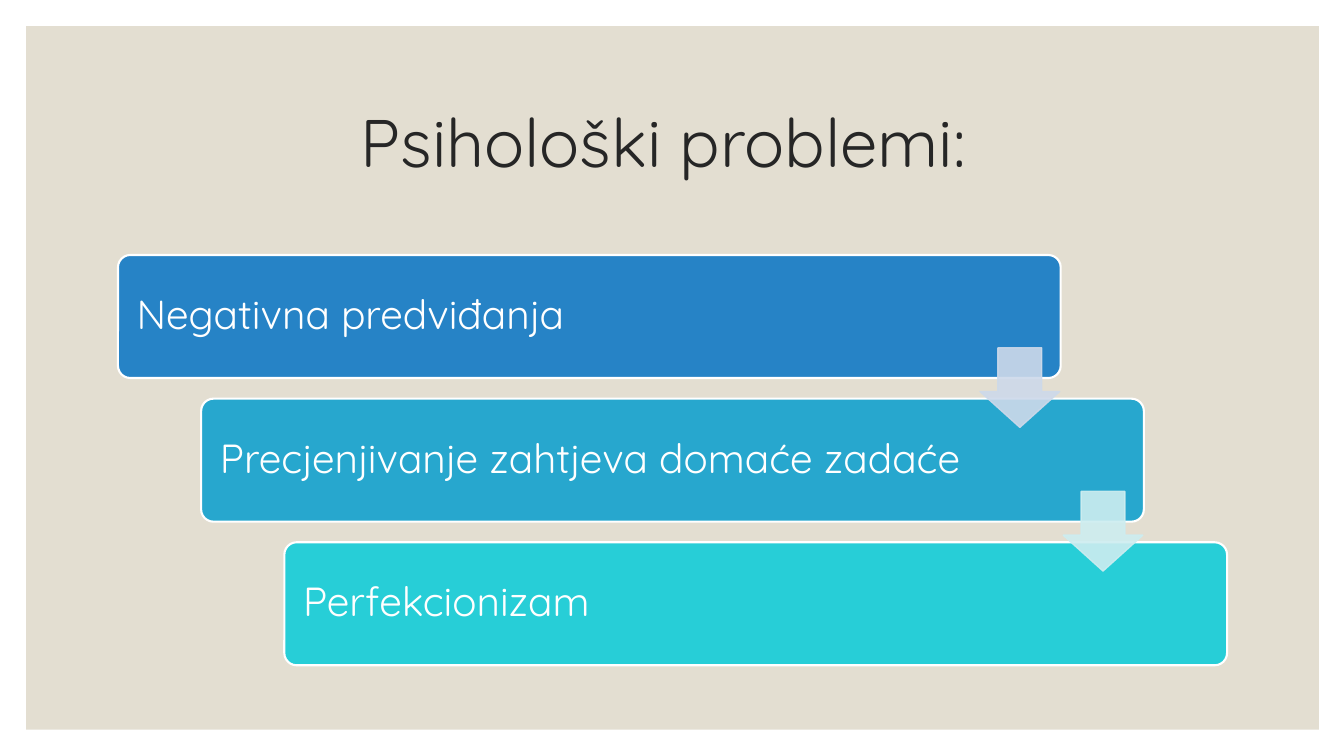
from lxml.etree import SubElement
from pptx import Presentation
from pptx.dml.color import RGBColor
from pptx.enum.shapes import MSO_SHAPE
from pptx.enum.text import MSO_ANCHOR, PP_ALIGN
from pptx.oxml.ns import qn
from pptx.util import Inches, Pt

WHITE = RGBColor(0xFF, 0xFF, 0xFF)
SAND = RGBColor(0xE3, 0xDE, 0xD1)
DARK = RGBColor(0x26, 0x26, 0x26)
BLUE = RGBColor(0x26, 0x83, 0xC6)
AZURE = RGBColor(0x27, 0xA7, 0xCE)
CYAN = RGBColor(0x27, 0xCE, 0xD7)
PALE = RGBColor(0xCD, 0xD9, 0xEA)
MINT = RGBColor(0xCD, 0xED, 0xF0)


def add_form(kind, left, top, width, height, fill):
    form = slide.shapes.add_shape(
        kind, Inches(left), Inches(top), Inches(width), Inches(height))
    form.shadow.inherit = False
    form.fill.solid()
    form.fill.fore_color.rgb = fill
    return form


def set_text(frame, text, size, color, align):
    frame.word_wrap = True
    frame.vertical_anchor = MSO_ANCHOR.MIDDLE
    para = frame.paragraphs[0]
    para.text = text
    para.alignment = align
    para.line_spacing = 0.9
    font = para.runs[0].font
    font.name = "Quicksand"
    font.size = Pt(size)
    font.color.rgb = color


prs = Presentation()
prs.slide_width = Inches(13.33)
prs.slide_height = Inches(7.5)
slide = prs.slides.add_slide(prs.slide_layouts[6])

# Background panel
panel = add_form(MSO_SHAPE.RECTANGLE, 0.26, 0.26, 12.82, 6.98, SAND)
panel.line.fill.background()

# Title
title = slide.shapes.add_textbox(Inches(1.17), Inches(0.7), Inches(11), Inches(1.5))
set_text(title.text_frame, "Psihološki problemi: ", 48, DARK, PP_ALIGN.CENTER)
title.text_frame.paragraphs[0].space_after = Pt(6)

# Staircase of steps
LEFT, TOP = 1.17, 2.53
DX, DY = 0.825, 1.425
steps = [
    ("Negativna predviđanja", BLUE),
    ("Precjenjivanje zahtjeva domaće zadaće", AZURE),
    ("Perfekcionizam", CYAN),
]
for i, (text, color) in enumerate(steps):
    step = add_form(MSO_SHAPE.ROUNDED_RECTANGLE,
                    LEFT + i * DX, TOP + i * DY, 9.35, 1.22, color)
    step.adjustments[0] = 0.1
    step.line.color.rgb = WHITE
    step.line.width = Pt(1.5)
    step.text_frame.margin_left = Inches(0.15)
    set_text(step.text_frame, text, 29, WHITE, PP_ALIGN.LEFT)

# Arrows between the steps, slightly see-through
for i, color in enumerate([PALE, MINT]):
    arrow = add_form(MSO_SHAPE.DOWN_ARROW,
                     LEFT + 8.55 + i * DX, TOP + 0.92 + i * DY, 0.79, 0.79, color)
    arrow.adjustments[0] = 0.55
    arrow.adjustments[1] = 0.45
    arrow.line.color.rgb = color
    arrow.line.width = Pt(1)
    for tint in arrow.element.spPr.iter(qn("a:srgbClr")):
        SubElement(tint, qn("a:alpha"), val="90000")

prs.save("out.pptx")
